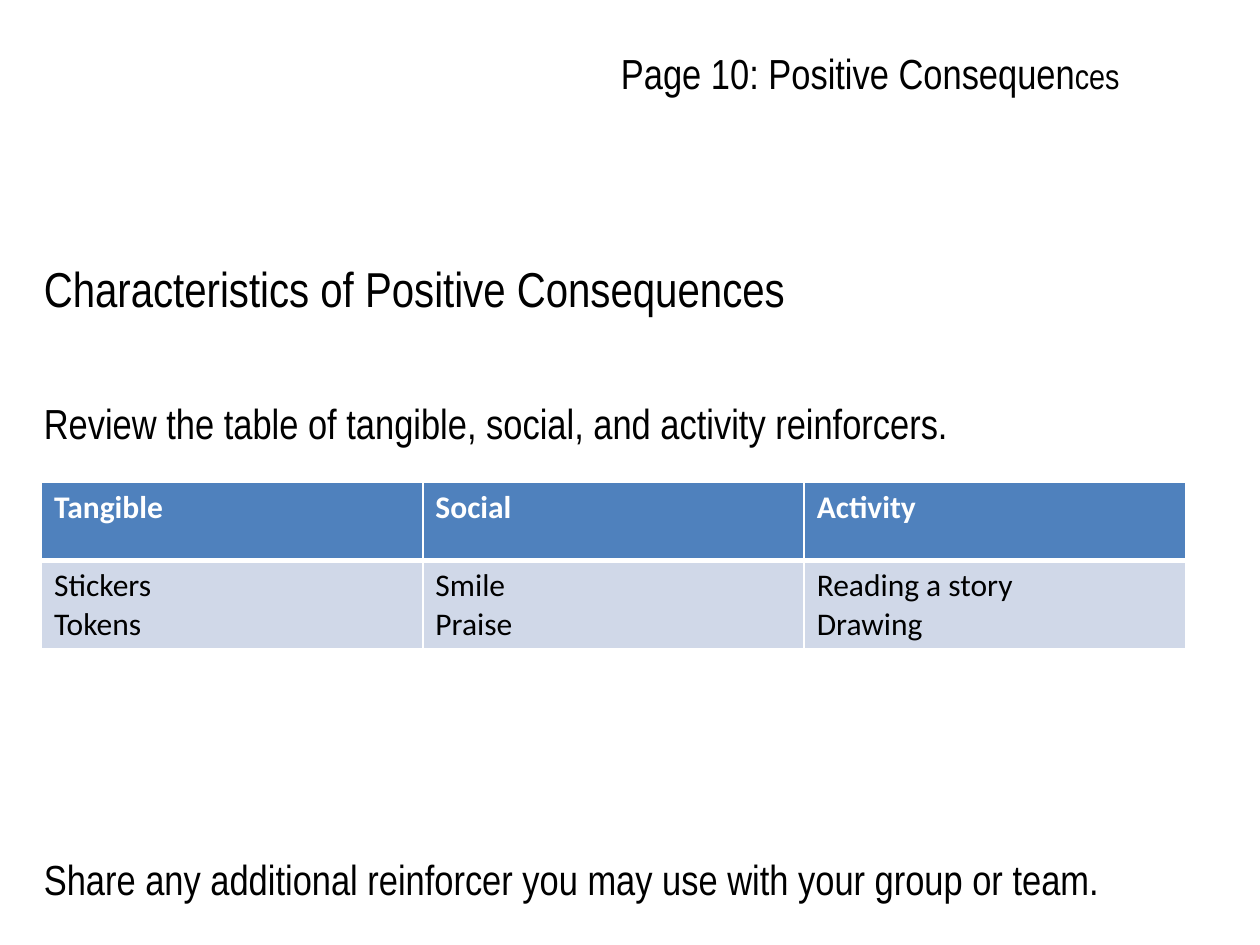
from lxml import etree
from pptx import Presentation
from pptx.dml.color import RGBColor
from pptx.enum.text import MSO_ANCHOR
from pptx.oxml.ns import qn
from pptx.util import Inches, Pt

BLACK = RGBColor(0x00, 0x00, 0x00)
WHITE = RGBColor(0xFF, 0xFF, 0xFF)
HEADER_BLUE = RGBColor(0x4F, 0x81, 0xBD)
BODY_BLUE = RGBColor(0xD0, 0xD8, 0xE8)
ANCHOR_BOTTOM = MSO_ANCHOR.BOTTOM
TEXT_FONT = "Arial Narrow"
TABLE_FONT = "Calibri"

# Text, size, space before (points)
BODY_PARAGRAPHS = [
    ("Characteristics of Positive Consequences", 28, 0),
    ("Review the table of tangible, social, and activity reinforcers.", 24, 46),
    ("Share any additional reinforcer you may use with your group or team.", 24, 232),
]
REINFORCERS = [
    ["Tangible", "Social", "Activity"],
    ["Stickers\nTokens", "Smile\nPraise", "Reading a story\nDrawing"],
]


def format_font(font, name, size, color, bold=False):
    font.name = name
    font.size = Pt(size)
    font.color.rgb = color
    font.bold = bold


def add_text_box(slide, left, top, width, height):
    shape = slide.shapes.add_textbox(Inches(left), Inches(top), Inches(width), Inches(height))
    shape.text_frame.word_wrap = True
    return shape.text_frame


def add_page_title(slide):
    text_frame = add_text_box(slide, 4.83, 0.33, 4.25, 0.5)
    text_frame.vertical_anchor = ANCHOR_BOTTOM
    paragraph = text_frame.paragraphs[0]
    for text, size in [("Page 10: Positive Consequen", 24), ("ces", 20)]:
        run = paragraph.add_run()
        run.text = text
        format_font(run.font, TEXT_FONT, size, BLACK)


def add_body(slide):
    text_frame = add_text_box(slide, 0.25, 2, 8.83, 2.58)
    text_frame.text = "\n".join(text for text, _, _ in BODY_PARAGRAPHS)
    for paragraph, (_, size, space) in zip(text_frame.paragraphs, BODY_PARAGRAPHS):
        if space:
            paragraph.space_before = Pt(space)
        format_font(paragraph.runs[0].font, TEXT_FONT, size, BLACK)


def set_borders(cell, widths):
    properties = cell._tc.get_or_add_tcPr()
    for side, width in widths.items():
        line = etree.SubElement(properties, qn(f"a:ln{side}"), w=str(Pt(width)))
        fill = etree.SubElement(line, qn("a:solidFill"))
        etree.SubElement(fill, qn("a:srgbClr"), val=str(WHITE))


def add_reinforcer_table(slide):
    table = slide.shapes.add_table(
        2, 3, Inches(0.33), Inches(3.83), Inches(9.08), Inches(1.24)
    ).table
    for row_index, texts in enumerate(REINFORCERS):
        is_header = row_index == 0
        for column_index, text in enumerate(texts):
            cell = table.cell(row_index, column_index)
            # The thick rule lies between the header and the body
            top, bottom = (1, 3) if is_header else (3, 1)
            set_borders(cell, {"L": 1, "R": 1, "T": top, "B": bottom})
            cell.fill.solid()
            cell.fill.fore_color.rgb = HEADER_BLUE if is_header else BODY_BLUE
            cell.text_frame.text = text
            for paragraph in cell.text_frame.paragraphs:
                color = WHITE if is_header else BLACK
                format_font(paragraph.runs[0].font, TABLE_FONT, 18, color, is_header)


def main():
    presentation = Presentation()
    presentation.slide_width = Inches(10)
    presentation.slide_height = Inches(7.5)
    slide = presentation.slides.add_slide(presentation.slide_layouts[6])
    add_body(slide)
    add_reinforcer_table(slide)
    add_page_title(slide)
    presentation.save("out.pptx")


if __name__ == "__main__":
    main()
